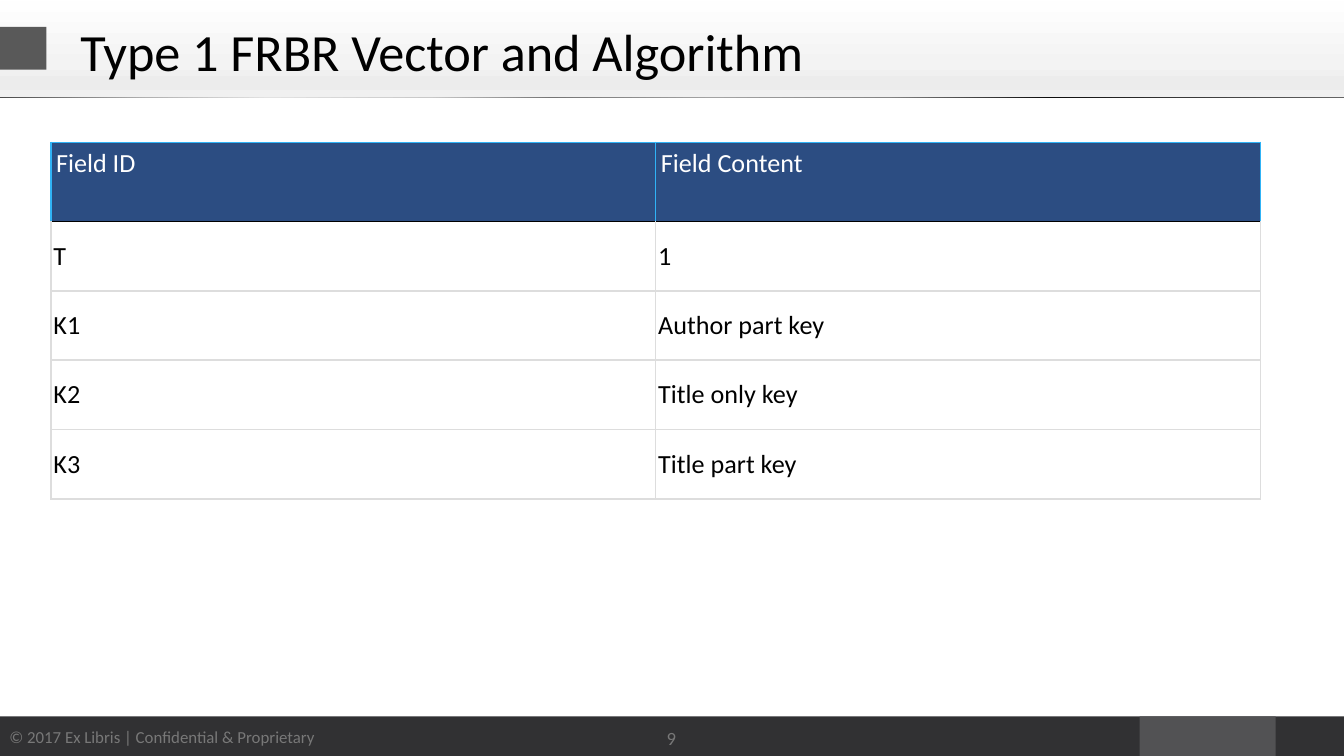
from lxml.etree import SubElement
from pptx import Presentation
from pptx.dml.color import RGBColor
from pptx.enum.shapes import MSO_SHAPE as Shape
from pptx.enum.text import MSO_ANCHOR as Anchor, PP_ALIGN as Align
from pptx.oxml.ns import qn
from pptx.util import Cm, Pt

BLACK = RGBColor(0x00, 0x00, 0x00)
WHITE = RGBColor(0xFF, 0xFF, 0xFF)
NAVY = RGBColor(0x2C, 0x4D, 0x82)
SKY = RGBColor(0x30, 0xB3, 0xF6)
RULE_GREY = RGBColor(0xDD, 0xDD, 0xDD)
FOOTER_TEXT = RGBColor(0x78, 0x78, 0x78)
FOOTER_DARK = RGBColor(0x31, 0x31, 0x33)
FOOTER_BLOCK = RGBColor(0x52, 0x52, 0x54)
TITLE_MARK = RGBColor(0x59, 0x59, 0x59)

TITLE = "Type 1 FRBR Vector and Algorithm"
COPYRIGHT = "© 2017 Ex Libris | Confidential & Proprietary"
PAGE_NUMBER = "9"
ROWS = [
    ("Field ID", "Field Content"),
    ("T", "1"),
    ("K1", "Author part key"),
    ("K2", "Title only key"),
    ("K3", "Title part key"),
]

HEADER_STOPS = [(0, 0xFE), (66, 0xF3), (83, 0xEC), (100, 0xF0)]
RULE_STOPS = [
    (0, 0x4C), (11, 0xB1), (20, 0xE2), (32, 0xC8), (41, 0x76),
    (53, 0xA3), (66, 0x85), (78, 0x0F), (88, 0x39), (100, 0x65),
]

SLIDE_WIDTH, SLIDE_HEIGHT = 25.4, 14.29
FOOTER_TOP, FOOTER_HEIGHT = 13.54, 0.8
TABLE_LEFT, TABLE_TOP, TABLE_WIDTH = 0.96, 2.69, 22.86
HEADER_ROW, BODY_ROW = 1.5, 1.31


def add_block(slide, left, top, width, height, color=None):
    shape = slide.shapes.add_shape(
        Shape.RECTANGLE, Cm(left), Cm(top), Cm(width), Cm(height))
    shape.shadow.inherit = False
    shape.line.fill.background()
    if color is not None:
        shape.fill.solid()
        shape.fill.fore_color.rgb = color
    return shape


def fill_gradient(shape, stops, angle):
    shape.fill.gradient()
    gradient = shape._element.spPr.find(qn("a:gradFill"))
    stop_list = gradient.find(qn("a:gsLst"))
    for stop in list(stop_list):
        stop_list.remove(stop)
    for position, grey in stops:
        stop = SubElement(stop_list, qn("a:gs"), pos=str(position * 1000))
        SubElement(stop, qn("a:srgbClr"), val=str(RGBColor(grey, grey, grey)))
    gradient.find(qn("a:lin")).set("ang", str(angle * 60000))


def write_text(frame, text, size=14, color=BLACK, align=Align.LEFT):
    paragraph = frame.paragraphs[0]
    paragraph.alignment = align
    run = paragraph.add_run()
    run.text = text
    run.font.name = "Calibri"
    run.font.size = Pt(size)
    run.font.color.rgb = color


def add_text(slide, left, top, width, height, text,
             wrap=True, anchor=Anchor.MIDDLE, **text_format):
    box = slide.shapes.add_textbox(Cm(left), Cm(top), Cm(width), Cm(height))
    box.text_frame.word_wrap = wrap
    box.text_frame.vertical_anchor = anchor
    write_text(box.text_frame, text, **text_format)


def set_borders(cell, **colors):
    properties = cell._tc.get_or_add_tcPr()
    for side in "LRTB":
        line = SubElement(properties, qn(f"a:ln{side}"), w=str(Pt(1)))
        fill = SubElement(line, qn("a:solidFill"))
        SubElement(fill, qn("a:srgbClr"), val=str(colors[side]))


def format_cell(cell, text, row):
    header = row == 0
    edge = SKY if header else RULE_GREY
    set_borders(cell, L=edge, R=edge,
                T=BLACK if row == 1 else edge,
                B=BLACK if header else edge)
    cell.fill.solid()
    cell.fill.fore_color.rgb = NAVY if header else WHITE
    cell.vertical_anchor = Anchor.TOP if header else Anchor.MIDDLE
    inset = Cm(0.1 if header else 0.05)
    cell.margin_left = cell.margin_right = inset
    cell.margin_top = cell.margin_bottom = inset
    write_text(cell.text_frame, text, color=WHITE if header else BLACK)


def add_field_table(slide):
    heights = [HEADER_ROW] + [BODY_ROW] * (len(ROWS) - 1)
    table = slide.shapes.add_table(
        len(ROWS), len(ROWS[0]), Cm(TABLE_LEFT), Cm(TABLE_TOP),
        Cm(TABLE_WIDTH), Cm(sum(heights))).table
    table.first_row = False
    table.horz_banding = False
    for row, (height, texts) in enumerate(zip(heights, ROWS)):
        table.rows[row].height = Cm(height)
        for column, text in enumerate(texts):
            format_cell(table.cell(row, column), text, row)


def main():
    presentation = Presentation()
    presentation.slide_width = Cm(SLIDE_WIDTH)
    presentation.slide_height = Cm(SLIDE_HEIGHT)
    slide = presentation.slides.add_slide(presentation.slide_layouts[6])

    add_block(slide, 0, FOOTER_TOP, SLIDE_WIDTH, FOOTER_HEIGHT, FOOTER_DARK)
    add_text(slide, -0.1, 13.61, 6.32, 0.64, COPYRIGHT, wrap=False,
             anchor=Anchor.TOP, size=9, color=FOOTER_TEXT, align=Align.CENTER)
    add_block(slide, 21.54, FOOTER_TOP, 2.57, FOOTER_HEIGHT, FOOTER_BLOCK)

    header = add_block(slide, 0, 0.02, SLIDE_WIDTH, 1.83)
    fill_gradient(header, HEADER_STOPS, 90)
    add_block(slide, 0, 0.51, 0.88, 0.81, TITLE_MARK)
    rule = add_block(slide, 0, 1.83, SLIDE_WIDTH, 0.02)
    fill_gradient(rule, RULE_STOPS, 0)

    add_text(slide, 11.94, 13.44, 1.5, 1.02, PAGE_NUMBER,
             size=10, color=FOOTER_TEXT, align=Align.CENTER)
    add_text(slide, 1.27, 0.15, 22.86, 1.6, TITLE, size=28)
    add_field_table(slide)

    presentation.save("out.pptx")


if __name__ == "__main__":
    main()
